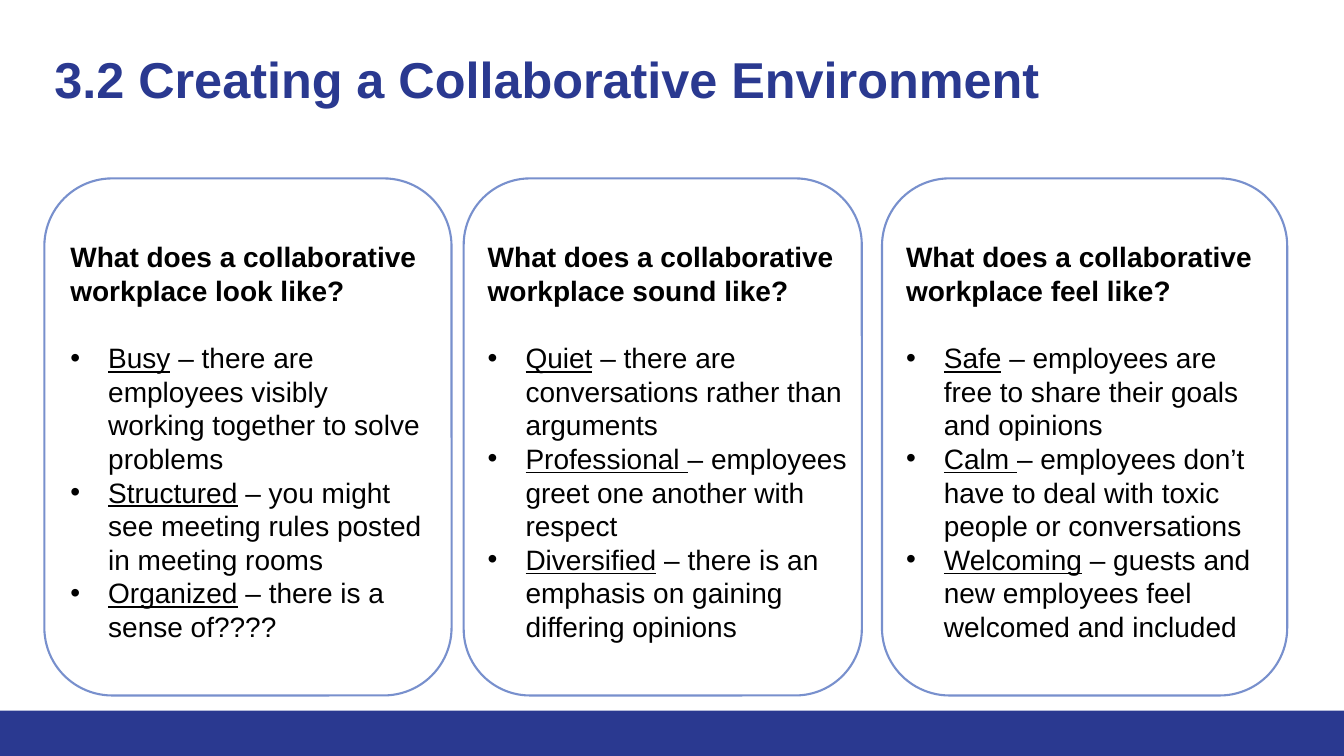
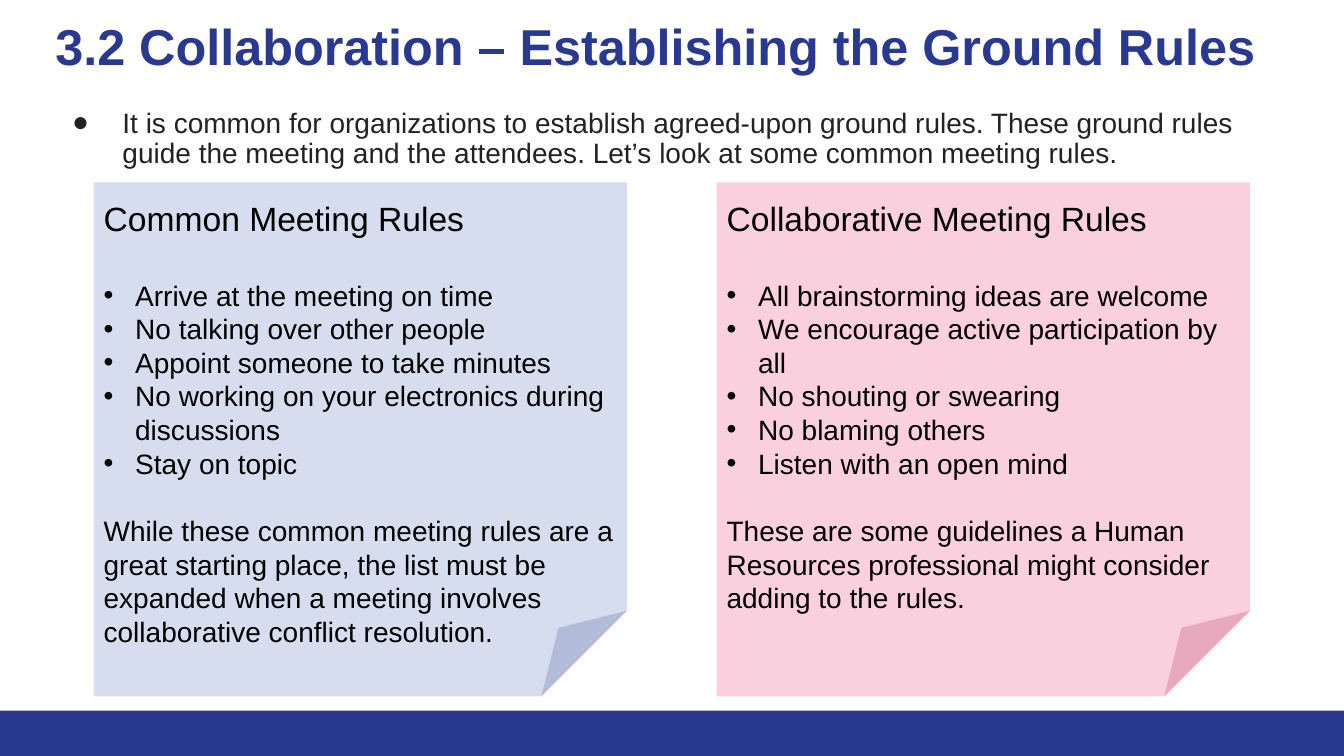
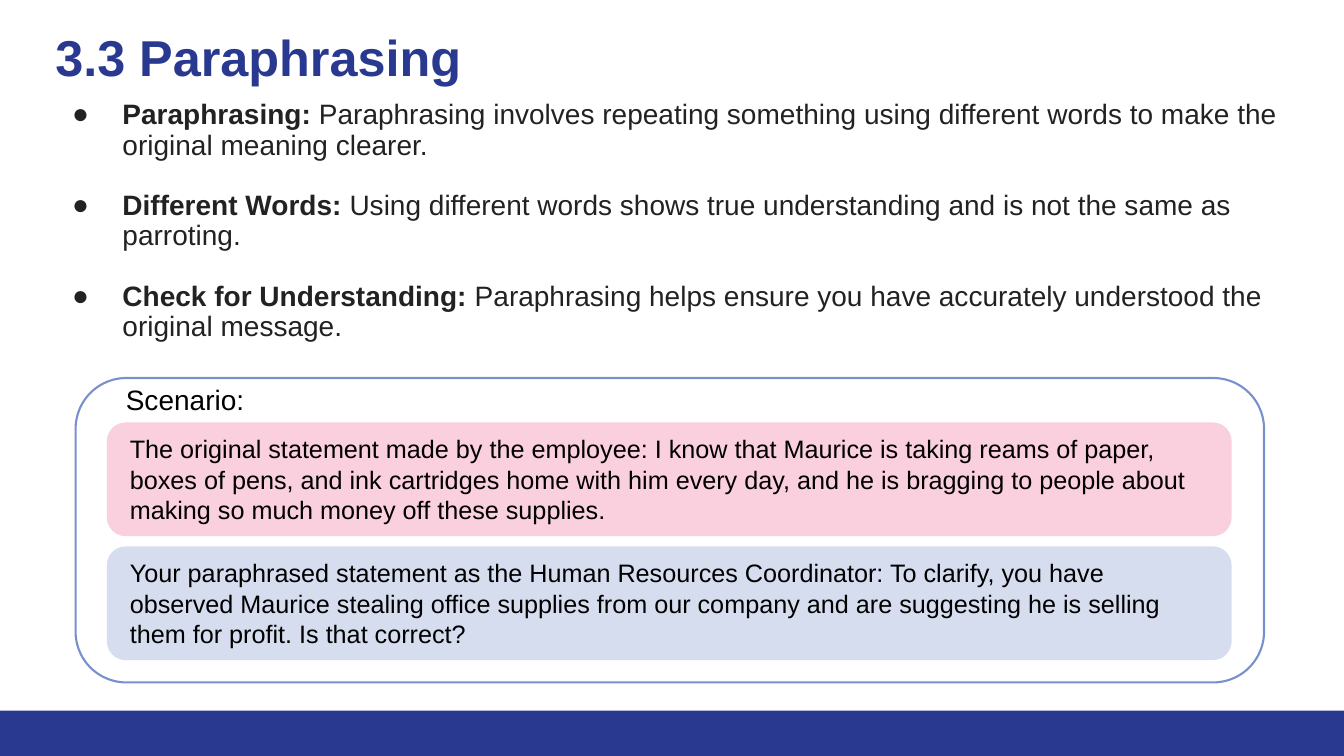
from dataclasses import dataclass
from typing import Optional

from lxml.etree import SubElement
from pptx import Presentation
from pptx.dml.color import RGBColor
from pptx.enum.shapes import MSO_SHAPE
from pptx.enum.text import MSO_ANCHOR
from pptx.oxml.ns import qn
from pptx.presentation import Presentation as Deck
from pptx.slide import Slide
from pptx.util import Pt

FONT = "Arial"
NAVY = RGBColor(0x2A, 0x39, 0x90)
PERIWINKLE = RGBColor(0x78, 0x90, 0xCD)
PINK = RGBColor(0xF0, 0x62, 0x92)
CHARCOAL = RGBColor(0x22, 0x22, 0x22)
BLACK = RGBColor(0x00, 0x00, 0x00)
WHITE = RGBColor(0xFF, 0xFF, 0xFF)

SLIDE_WIDTH = 960
SLIDE_HEIGHT = 540
BAND_HEIGHT = 32.4
TITLE_SIZE = 36
BODY_SIZE = 20
NOTE_HEADING_SIZE = 24
STATEMENT_SIZE = 18
BODY_WIDTH = 894.24
TINT_OPACITY = 30


@dataclass(frozen=True)
class Box:
    left: float
    top: float
    width: float
    height: float


@dataclass(frozen=True)
class Bullet:
    symbol: str
    indent: float
    hanging: float
    color: RGBColor


@dataclass(frozen=True)
class Phrase:
    text: str
    bold: bool = False
    underline: bool = False


@dataclass(frozen=True)
class Line:
    phrases: tuple[Phrase, ...]
    size: float = BODY_SIZE
    color: RGBColor = BLACK
    bullet: Optional[Bullet] = None
    spacing: float = 1.0
    gap_after: float = 0


@dataclass(frozen=True)
class Card:
    left: float
    width: float
    text_left: float
    text_width: float
    question: str
    traits: tuple[tuple[str, str], ...]


@dataclass(frozen=True)
class Note:
    left: float
    tint: RGBColor
    heading: str
    rules: tuple[str, ...]
    closing: str


@dataclass(frozen=True)
class Statement:
    top: float
    tint: RGBColor
    text: str


BODY_BULLET = Bullet("●", 48, 36, CHARCOAL)
TRAIT_BULLET = Bullet("•", 27, 27, BLACK)
RULE_BULLET = Bullet("•", 22.5, 22.5, BLACK)

CARDS = (
    Card(31.68, 290.88, 43.2, 266.4, "What does a collaborative workplace look like?", (
        ("Busy", " – there are employees visibly working together to solve problems"),
        ("Structured", " – you might see meeting rules posted in meeting rooms"),
        ("Organized", " – there is a sense of????"),
    )),
    Card(331.2, 284.4, 341.28, 275.76, "What does a collaborative workplace sound like?", (
        ("Quiet", " – there are conversations rather than arguments"),
        ("Professional ", "– employees greet one another with respect"),
        ("Diversified", " – there is an emphasis on gaining differing opinions"),
    )),
    Card(630, 289.44, 640.08, 266.4, "What does a collaborative workplace feel like?", (
        ("Safe", " – employees are free to share their goals and opinions"),
        ("Calm ", "– employees don’t have to deal with toxic people or conversations"),
        ("Welcoming", " – guests and new employees feel welcomed and included"),
    )),
)

NOTES = (
    Note(66.96, PERIWINKLE, "Common Meeting Rules", (
        "Arrive at the meeting on time",
        "No talking over other people",
        "Appoint someone to take minutes",
        "No working on your electronics during discussions",
        "Stay on topic",
    ), "While these common meeting rules are a great starting place, the list must be "
       "expanded when a meeting involves collaborative conflict resolution."),
    Note(511.92, PINK, "Collaborative Meeting Rules", (
        "All brainstorming ideas are welcome",
        "We encourage active participation by all",
        "No shouting or swearing",
        "No blaming others",
        "Listen with an open mind",
    ), "These are some guidelines a Human Resources professional might consider adding "
       "to the rules."),
)

PARAPHRASING_POINTS = (
    ("Paraphrasing: ", "Paraphrasing involves repeating something using different words "
                       "to make the original meaning clearer."),
    ("Different Words: ", "Using different words shows true understanding and is not the "
                          "same as parroting."),
    ("Check for Understanding: ", "Paraphrasing helps ensure you have accurately "
                                  "understood the original message."),
)

STATEMENTS = (
    Statement(301.68, PINK,
              "The original statement made by the employee: I know that Maurice is taking "
              "reams of paper, boxes of pens, and ink cartridges home with him every day, "
              "and he is bragging to people about making so much money off these supplies."),
    Statement(390.24, PERIWINKLE,
              "Your paraphrased statement as the Human Resources Coordinator: To clarify, "
              "you have observed Maurice stealing office supplies from our company and are "
              "suggesting he is selling them for profit. Is that correct?"),
)


def add_panel(slide: Slide, kind: MSO_SHAPE, box: Box, fill: RGBColor,
              outline: Optional[RGBColor] = None, opacity: int = 100) -> None:
    panel = slide.shapes.add_shape(
        kind, Pt(box.left), Pt(box.top), Pt(box.width), Pt(box.height))
    panel.shadow.inherit = False
    panel.fill.solid()
    panel.fill.fore_color.rgb = fill
    if opacity < 100:
        tint = panel.fill._xPr.find(qn("a:solidFill"))[0]
        SubElement(tint, qn("a:alpha"), val=str(opacity * 1000))
    if outline is None:
        panel.line.fill.background()
    else:
        panel.line.color.rgb = outline
        panel.line.width = Pt(1.5)


def add_text(slide: Slide, box: Box, lines: list[Line], inset: float = 3.6) -> None:
    frame = slide.shapes.add_textbox(
        Pt(box.left), Pt(box.top), Pt(box.width), Pt(box.height)).text_frame
    frame.word_wrap = True
    frame.vertical_anchor = MSO_ANCHOR.TOP
    frame.margin_left = frame.margin_right = Pt(7.2)
    frame.margin_top = frame.margin_bottom = Pt(inset)
    for index, line in enumerate(lines):
        paragraph = frame.add_paragraph() if index else frame.paragraphs[0]
        paragraph.line_spacing = line.spacing
        paragraph.space_after = Pt(line.gap_after)
        if line.bullet:
            properties = paragraph._p.get_or_add_pPr()
            properties.set("marL", str(Pt(line.bullet.indent)))
            properties.set("indent", str(-Pt(line.bullet.hanging)))
            color = SubElement(properties, qn("a:buClr"))
            SubElement(color, qn("a:srgbClr"), val=str(line.bullet.color))
            SubElement(properties, qn("a:buFont"), typeface=FONT)
            SubElement(properties, qn("a:buChar"), char=line.bullet.symbol)
        for phrase in line.phrases:
            run = paragraph.add_run()
            run.text = phrase.text
            run.font.name = FONT
            run.font.size = Pt(line.size)
            run.font.color.rgb = line.color
            run.font.bold = phrase.bold
            run.font.underline = phrase.underline


def add_titled_slide(deck: Deck, title: str, box: Box) -> Slide:
    slide = deck.slides.add_slide(deck.slide_layouts[6])
    add_panel(slide, MSO_SHAPE.RECTANGLE,
              Box(0, SLIDE_HEIGHT - BAND_HEIGHT, SLIDE_WIDTH, BAND_HEIGHT), NAVY)
    add_text(slide, box,
             [Line((Phrase(title, bold=True),), TITLE_SIZE, NAVY, spacing=0.9)], inset=7.2)
    return slide


def body_line(*phrases: Phrase, gap_after: float = 0) -> Line:
    return Line(phrases, BODY_SIZE, CHARCOAL, BODY_BULLET, 0.9, gap_after)


def add_card(slide: Slide, card: Card) -> None:
    add_panel(slide, MSO_SHAPE.ROUNDED_RECTANGLE,
              Box(card.left, 127.44, card.width, 369.36), WHITE, PERIWINKLE)
    traits = [Line((Phrase(trait, underline=True), Phrase(meaning)), bullet=TRAIT_BULLET)
              for trait, meaning in card.traits]
    add_text(slide, Box(card.text_left, 167.76, card.text_width, 298.08),
             [Line((Phrase(card.question, bold=True),), gap_after=24), *traits])


def add_note(slide: Slide, note: Note) -> None:
    add_panel(slide, MSO_SHAPE.FOLDED_CORNER, Box(note.left, 130.32, 380.88, 367.2),
              note.tint, opacity=TINT_OPACITY)
    last = len(note.rules) - 1
    rules = [Line((Phrase(rule),), bullet=RULE_BULLET, gap_after=24 if index == last else 0)
             for index, rule in enumerate(note.rules)]
    add_text(slide, Box(note.left, 137.52, 380.88, 331.92),
             [Line((Phrase(note.heading),), NOTE_HEADING_SIZE, gap_after=28.8),
              *rules, Line((Phrase(note.closing),))])


def add_statement(slide: Slide, statement: Statement) -> None:
    add_panel(slide, MSO_SHAPE.ROUNDED_RECTANGLE, Box(76.32, statement.top, 803.52, 81.36),
              statement.tint, opacity=TINT_OPACITY)
    add_text(slide, Box(85.68, statement.top + 4.6, 787.68, 72.72),
             [Line((Phrase(statement.text),), STATEMENT_SIZE)])


def build_environment(deck: Deck) -> None:
    slide = add_titled_slide(deck, "3.2 Creating a Collaborative Environment",
                             Box(31.68, 32.4, BODY_WIDTH, 60.48))
    for card in CARDS:
        add_card(slide, card)


def build_ground_rules(deck: Deck) -> None:
    slide = add_titled_slide(deck, "3.2 Collaboration – Establishing the Ground Rules",
                             Box(32.4, 8.64, BODY_WIDTH, 84.24))
    introduction = Phrase(
        "It is common for organizations to establish agreed-upon ground rules. These ground "
        "rules guide the meeting and the attendees. Let’s look at some common meeting rules.")
    add_text(slide, Box(32.4, 70.56, BODY_WIDTH, 66.96), [body_line(introduction)], inset=7.2)
    for note in NOTES:
        add_note(slide, note)


def build_paraphrasing(deck: Deck) -> None:
    slide = add_titled_slide(deck, "3.3 Paraphrasing", Box(32.4, 16.56, BODY_WIDTH, 64.08))
    points = [body_line(Phrase(term, bold=True), Phrase(meaning), gap_after=21.6)
              for term, meaning in PARAPHRASING_POINTS]
    add_text(slide, Box(32.4, 64.8, BODY_WIDTH, 158.4), points, inset=7.2)
    add_panel(slide, MSO_SHAPE.ROUNDED_RECTANGLE, Box(54, 270, 848.88, 217.44),
              WHITE, PERIWINKLE)
    add_text(slide, Box(82.8, 270, 103.68, 31.68), [Line((Phrase("Scenario:"),))])
    for statement in STATEMENTS:
        add_statement(slide, statement)


def main() -> None:
    deck = Presentation()
    deck.slide_width = Pt(SLIDE_WIDTH)
    deck.slide_height = Pt(SLIDE_HEIGHT)
    build_environment(deck)
    build_ground_rules(deck)
    build_paraphrasing(deck)
    deck.save("out.pptx")


if __name__ == "__main__":
    main()
